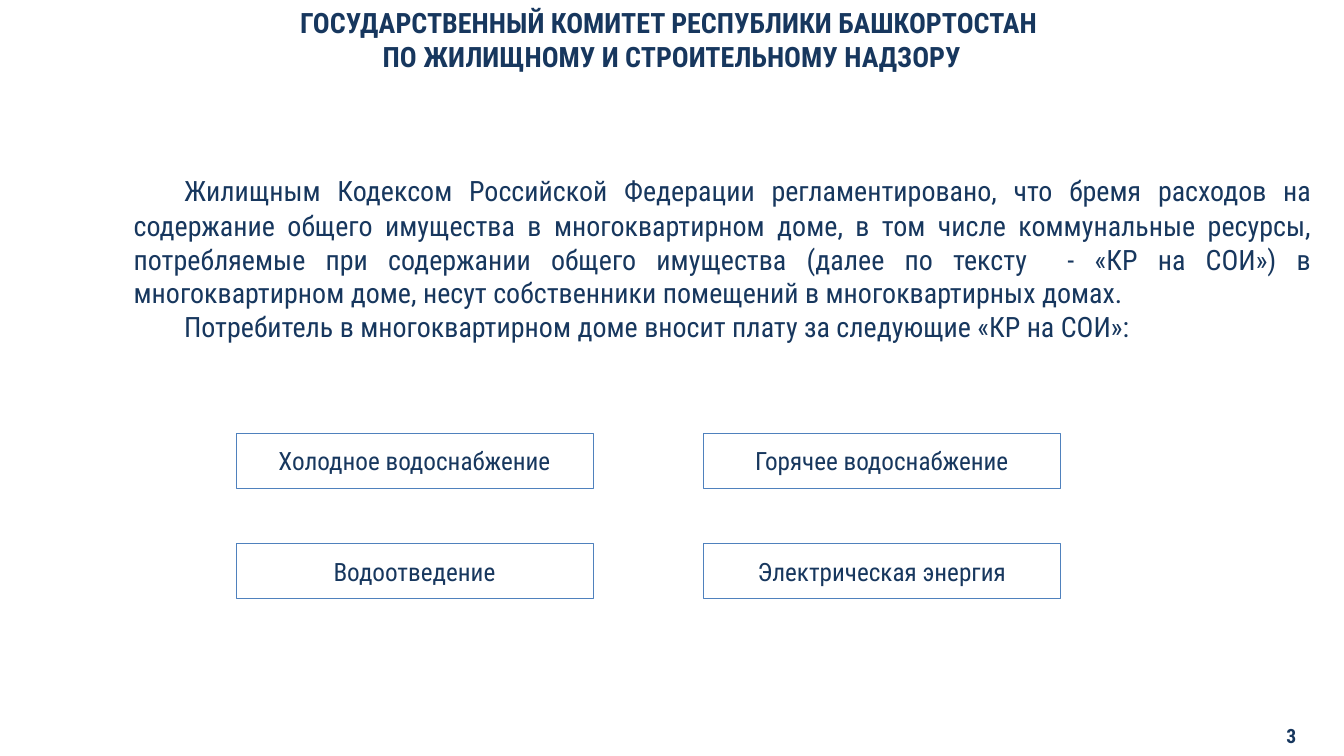
from pptx import Presentation
from pptx.dml.color import RGBColor
from pptx.enum.shapes import MSO_SHAPE as Shape
from pptx.enum.text import MSO_ANCHOR as Anchor, PP_ALIGN as Align
from pptx.util import Cm, Pt

FONT = "Roboto Condensed"
NAVY, BLUE, WHITE = "17375E", "4F81BD", "FFFFFF"
WIDTH, HEIGHT = 33.88, 19.05

TITLE = [
    "ГОСУДАРСТВЕННЫЙ КОМИТЕТ РЕСПУБЛИКИ БАШКОРТОСТАН ",
    "ПО ЖИЛИЩНОМУ И СТРОИТЕЛЬНОМУ НАДЗОРУ",
]
BODY = [
    (24, "Жилищным Кодексом Российской Федерации регламентировано, что бремя "
         "расходов на содержание общего имущества в многоквартирном доме, в том "
         "числе коммунальные ресурсы, потребляемые при содержании общего имущества "
         "(далее по тексту  - «КР на СОИ») в многоквартирном доме, несут "
         "собственники помещений в многоквартирных домах."),
    (20, "Потребитель в многоквартирном доме вносит плату за следующие «КР на СОИ»:"),
]
GRID = [
    ["Холодное водоснабжение", "Горячее водоснабжение"],
    ["Водоотведение", "Электрическая энергия"],
]
PAGE = "3"


def color(code):
    return RGBColor.from_string(code)


def add_run(para, text, size, bold=False):
    run = para.add_run()
    run.text = text
    font = run.font
    font.name, font.size, font.bold = FONT, Pt(size), bold
    font.color.rgb = color(NAVY)


def add_box(slide, left, top, width, height, side=0.25, edge=0.13):
    box = slide.shapes.add_textbox(Cm(left), Cm(top), Cm(width), Cm(height))
    frame = box.text_frame
    frame.word_wrap = True
    frame.margin_left = frame.margin_right = Cm(side)
    frame.margin_top = frame.margin_bottom = Cm(edge)
    return frame


def add_card(slide, text, left, top):
    card = slide.shapes.add_shape(Shape.RECTANGLE, Cm(left), Cm(top), Cm(9), Cm(1.38))
    card.shadow.inherit = False
    card.fill.solid()
    card.fill.fore_color.rgb = color(WHITE)
    card.line.color.rgb = color(BLUE)
    card.line.width = Pt(0.25)
    frame = card.text_frame
    frame.word_wrap = True
    frame.vertical_anchor = Anchor.MIDDLE
    para = frame.paragraphs[0]
    para.alignment = Align.CENTER
    add_run(para, text, 18)


def main():
    deck = Presentation()
    deck.slide_width, deck.slide_height = Cm(WIDTH), Cm(HEIGHT)
    slide = deck.slides.add_slide(deck.slide_layouts[6])

    page = add_box(slide, 32.13, 18.03, 0.82, 1.02, 0.3, 0.15)
    page.vertical_anchor = Anchor.MIDDLE
    para = page.paragraphs[0]
    para.alignment = Align.RIGHT
    add_run(para, PAGE, 14, True)

    body = add_box(slide, 3.12, 4.11, 30.2, 5.56)
    for i, (size, text) in enumerate(BODY):
        para = body.add_paragraph() if i else body.paragraphs[0]
        para.alignment = Align.JUSTIFY
        add_run(para, "\t", size)
        add_run(para, text, 20)

    for row, names in enumerate(GRID):
        for col, name in enumerate(names):
            add_card(slide, name, 5.95 + 11.78 * col, 10.92 + 2.78 * row)

    para = add_box(slide, 0, 0, WIDTH, 2, 0.3, 0.15).paragraphs[0]
    para.alignment = Align.CENTER
    for i, line in enumerate(TITLE):
        if i:
            para.add_line_break()
        add_run(para, line, 20, True)

    deck.save("out.pptx")


if __name__ == "__main__":
    main()
